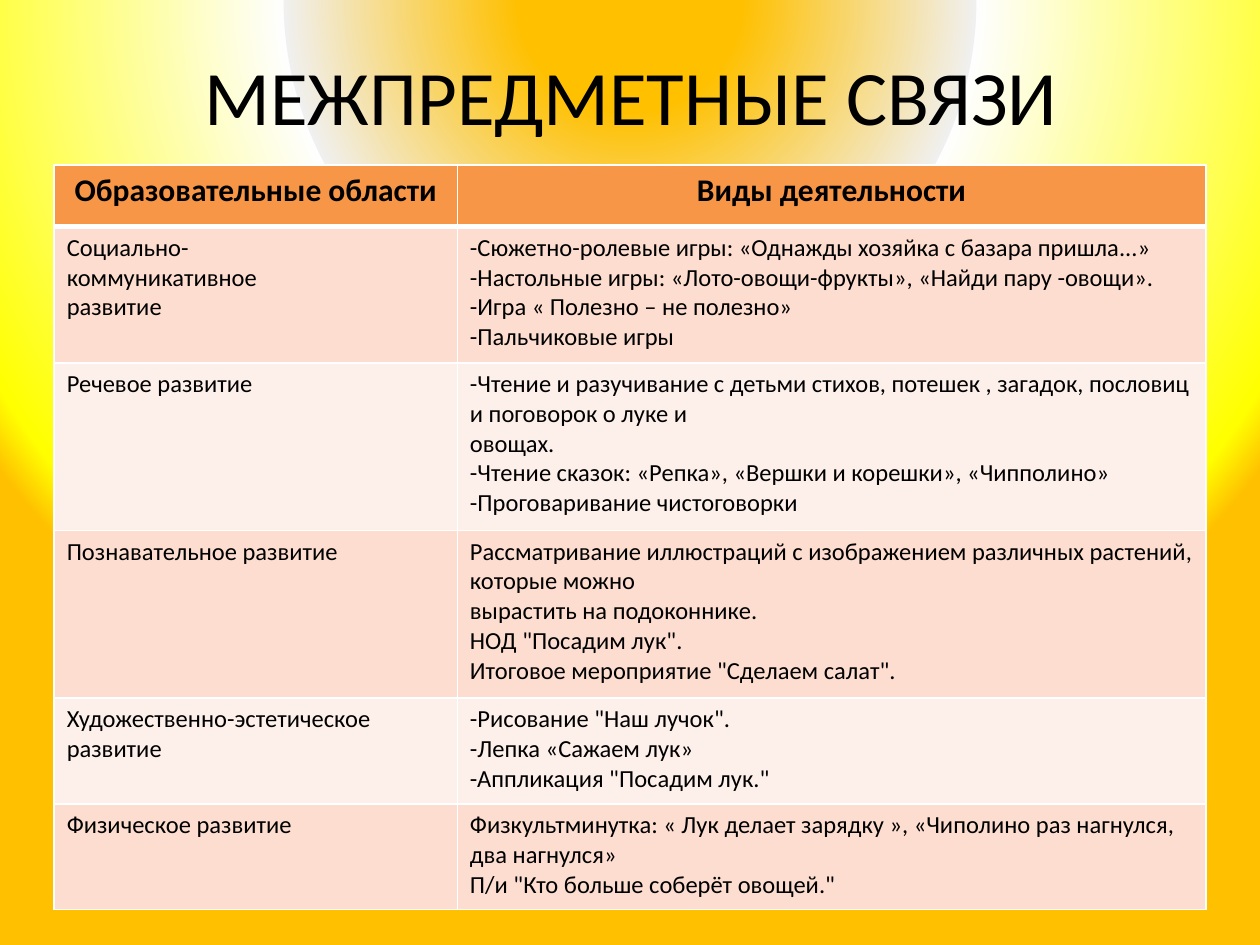
from pptx import Presentation
from pptx.dml.color import RGBColor
from pptx.enum.text import MSO_ANCHOR as Anchor, PP_ALIGN as Align
from pptx.oxml import parse_xml
from pptx.oxml.ns import nsdecls
from pptx.util import Inches, Pt

FONT = "Calibri"
BLACK = RGBColor(0x00, 0x00, 0x00)
WHITE = RGBColor(0xFF, 0xFF, 0xFF)
ORANGE = RGBColor(0xF7, 0x96, 0x46)
PEACH = RGBColor(0xFC, 0xDD, 0xCF)
PALE_PEACH = RGBColor(0xFD, 0xEF, 0xE9)
AMBER = RGBColor(0xFF, 0xC0, 0x00)
SILVER = RGBColor(0xF0, 0xF0, 0xF0)
NEAR_WHITE = RGBColor(0xFE, 0xFE, 0xFE)
YELLOW = RGBColor(0xFF, 0xFF, 0x00)

TITLE = "МЕЖПРЕДМЕТНЫЕ СВЯЗИ"
HEADER = (["Образовательные области"], ["Виды деятельности"])
AREAS = [
    (["Социально-", "коммуникативное", "развитие"],
     ["-Сюжетно-ролевые игры: «Однажды хозяйка с базара пришла...»",
      "-Настольные игры: «Лото-овощи-фрукты», «Найди пару -овощи».",
      "-Игра « Полезно – не полезно»",
      "-Пальчиковые игры"]),
    (["Речевое развитие"],
     ["-Чтение и разучивание с детьми стихов, потешек , загадок, пословиц "
      "и поговорок о луке и",
      "овощах.",
      "-Чтение сказок: «Репка», «Вершки и корешки», «Чипполино»",
      "-Проговаривание чистоговорки"]),
    (["Познавательное развитие"],
     ["Рассматривание иллюстраций с изображением различных растений, "
      "которые можно",
      "вырастить на подоконнике.",
      'НОД "Посадим лук".',
      'Итоговое мероприятие "Сделаем салат".']),
    (["Художественно-эстетическое развитие"],
     ['-Рисование "Наш лучок".',
      "-Лепка «Сажаем лук»",
      '-Аппликация "Посадим лук."']),
    (["Физическое развитие"],
     ["Физкультминутка: « Лук делает зарядку », «Чиполино раз нагнулся, "
      "два нагнулся»",
      'П/и "Кто больше соберёт овощей."']),
]
COLUMN_WIDTHS = (3.2, 5.94)
ROW_HEIGHTS = (0.49, 1.08, 1.33, 1.33, 0.84, 0.84)
# Position in percent, colour, opacity in percent
GLOW_STOPS = [(14, AMBER, 100), (44, SILVER, 100), (44, NEAR_WHITE, 100),
              (94, YELLOW, 80), (100, AMBER, 100)]

HEADER_FORMAT = {"size": Pt(18), "bold": True, "name": FONT}
BODY_FORMAT = {"size": Pt(14), "bold": False, "name": FONT}
TITLE_FORMAT = {"size": Pt(44), "name": FONT}


def write(frame, lines, font_format, align):
    frame.text = "\n".join(lines)
    for para in frame.paragraphs:
        para.alignment = align
        for span in para.runs:
            for name, value in font_format.items():
                setattr(span.font, name, value)
            span.font.color.rgb = BLACK


def paint_glow(slide):
    """Fill the background with a circular gradient centred above the slide."""
    slide.background.fill.solid()
    solid = slide.element.xpath(".//p:bgPr/a:solidFill")[0]
    stops = "".join(
        f'<a:gs pos="{position * 1000}"><a:srgbClr val="{color}">'
        f'<a:alpha val="{opacity * 1000}"/></a:srgbClr></a:gs>'
        for position, color, opacity in GLOW_STOPS)
    glow = parse_xml(
        f'<a:gradFill {nsdecls("a")} rotWithShape="1"><a:gsLst>{stops}</a:gsLst>'
        '<a:path path="circle"><a:fillToRect l="50000" t="-80000" r="50000" '
        'b="180000"/></a:path></a:gradFill>')
    solid.getparent().replace(solid, glow)


def set_borders(cell, top, bottom):
    """Draw white borders, with the top and bottom widths in points."""
    properties = cell._tc.get_or_add_tcPr()
    widths = {"lnL": 1, "lnR": 1, "lnT": top, "lnB": bottom}
    for index, (tag, width) in enumerate(widths.items()):
        properties.insert(index, parse_xml(
            f'<a:{tag} {nsdecls("a")} w="{Pt(width)}"><a:solidFill>'
            f'<a:srgbClr val="{WHITE}"/></a:solidFill></a:{tag}>'))


def add_areas_table(slide):
    rows = [HEADER, *AREAS]
    table = slide.shapes.add_table(
        len(rows), len(COLUMN_WIDTHS), Inches(0.43), Inches(1.31),
        Inches(sum(COLUMN_WIDTHS)), Inches(sum(ROW_HEIGHTS))).table
    for column, width in zip(table.columns, COLUMN_WIDTHS):
        column.width = Inches(width)
    for r, (row, height) in enumerate(zip(rows, ROW_HEIGHTS)):
        table.rows[r].height = Inches(height)
        is_header = r == 0
        color = ORANGE if is_header else PEACH if r % 2 else PALE_PEACH
        font_format = HEADER_FORMAT if is_header else BODY_FORMAT
        align = Align.CENTER if is_header else Align.LEFT
        for c, lines in enumerate(row):
            cell = table.cell(r, c)
            write(cell.text_frame, lines, font_format, align)
            cell.fill.solid()
            cell.fill.fore_color.rgb = color
            set_borders(cell, top=3 if r == 1 else 1, bottom=3 if is_header else 1)


def main():
    deck = Presentation()
    deck.slide_width, deck.slide_height = Inches(10), Inches(7.5)
    slide = deck.slides.add_slide(deck.slide_layouts[5])
    paint_glow(slide)

    title = slide.shapes.title
    title.left, title.top = Inches(0.51), Inches(0.13)
    title.width, title.height = Inches(9), Inches(1.25)
    title.text_frame.vertical_anchor = Anchor.MIDDLE
    write(title.text_frame, [TITLE], TITLE_FORMAT, Align.CENTER)

    add_areas_table(slide)
    deck.save("out.pptx")


if __name__ == "__main__":
    main()
